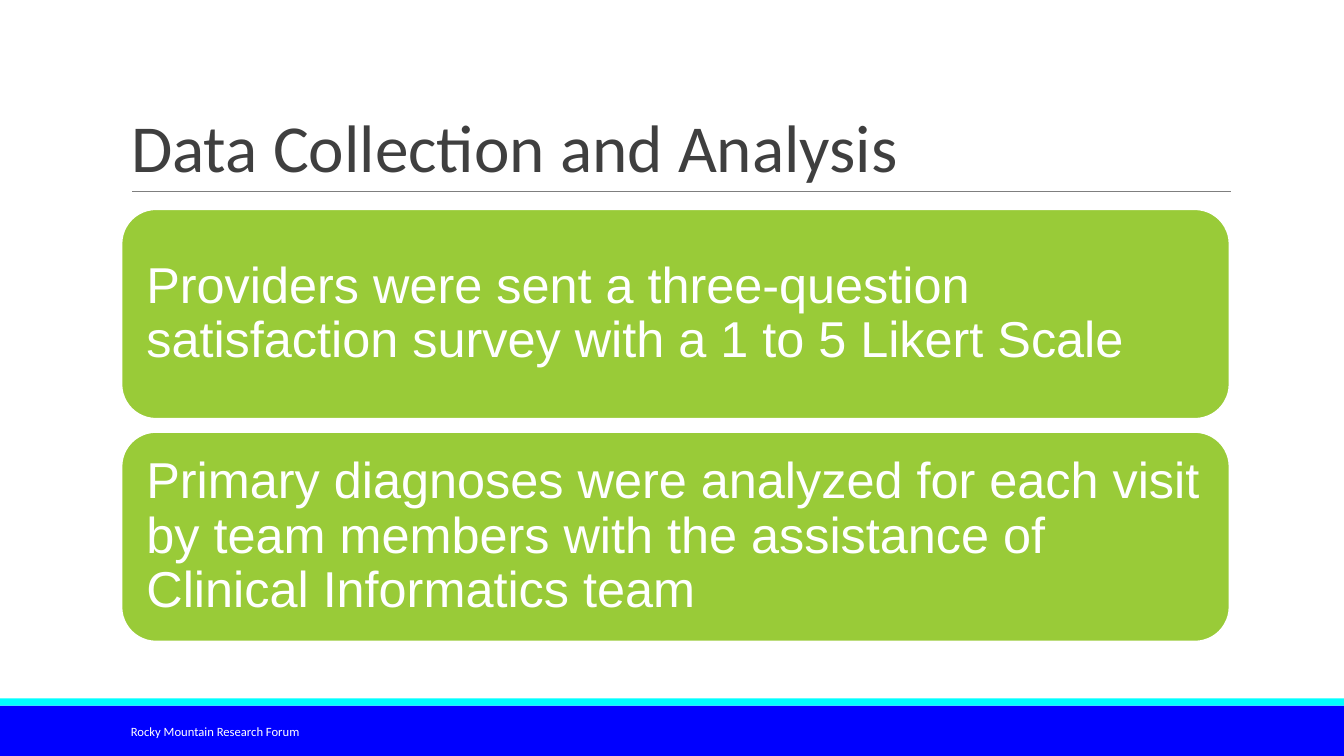
from pptx import Presentation
from pptx.dml.color import RGBColor
from pptx.enum.shapes import MSO_CONNECTOR as Link, MSO_SHAPE as Kind
from pptx.enum.text import MSO_ANCHOR as Anchor, MSO_AUTO_SIZE as Fit, PP_ALIGN as Align
from pptx.util import Emu, Pt
from lxml.etree import SubElement
from pptx.oxml.ns import qn


def tint(code):
    return RGBColor.from_string(code)


class Deck:
    """Holds the style and the current slide, and draws each kind of element."""

    SCALE = 9144
    WHITE, INK, RULE = "FFFFFF", "3F3F3F", "7F7F7F"
    GREEN, BLUE, CYAN = "99CB38", "0000FF", "00FFFF"
    HEAD, BODY = "Calibri", "Arial"

    def __init__(self, width, height):
        self.show = Presentation()
        self.show.slide_width, self.show.slide_height = self.size(width, height)
        self.slide = self.show.slides.add_slide(self.show.slide_layouts[5])
        self.slide.background.fill.solid()
        self.slide.background.fill.fore_color.rgb = tint(self.WHITE)

    def size(self, *spans):
        return [Emu(span * self.SCALE) for span in spans]

    def label(self, shape, words, points, font, color, anchor, pads, lead=1.0):
        frame = shape.text_frame
        frame.auto_size = Fit.NONE
        frame.word_wrap = True
        frame.vertical_anchor = anchor
        side, edge = self.size(*pads)
        frame.margin_left = frame.margin_right = side
        frame.margin_top = frame.margin_bottom = edge
        para = frame.paragraphs[0]
        para.alignment = Align.LEFT
        para.line_spacing = lead
        run = para.add_run()
        run.text = words
        run.font.name, run.font.size = font, Pt(points)
        run.font.color.rgb = tint(color)

    def block(self, kind, box, fill):
        shape = self.slide.shapes.add_shape(kind, *self.size(*box))
        shape.shadow.inherit = False
        shape.fill.solid()
        shape.fill.fore_color.rgb = tint(fill)
        shape.line.fill.background()
        return shape

    def band(self, box, fill):
        self.block(Kind.RECTANGLE, box, fill)

    def card(self, box, words):
        shape = self.block(Kind.ROUNDED_RECTANGLE, box, self.GREEN)
        shape.line.color.rgb = tint(self.WHITE)
        shape.line.width = Pt(2)
        self.label(shape, words, 36, self.BODY, self.WHITE, Anchor.MIDDLE, (15, 15), 0.9)

    def rule(self, left, right, top):
        line = self.slide.shapes.add_connector(
            Link.STRAIGHT, *self.size(left, top, right, top))
        line.line.color.rgb = tint(self.RULE)
        line.line.width = Pt(0.75)
        SubElement(line._element.spPr, qn("a:effectLst"))

    def title(self, box, words):
        shape = self.slide.shapes.title
        shape.left, shape.top, shape.width, shape.height = self.size(*box)
        self.label(shape, words, 48, self.HEAD, self.INK, Anchor.BOTTOM, (10, 5), 0.85)

    def note(self, box, words):
        shape = self.slide.shapes.add_textbox(*self.size(*box))
        self.label(shape, words, 9, self.HEAD, self.WHITE, Anchor.MIDDLE, (10, 5))


def main():
    wide, high, left, span = 1333, 750, 120, 1100
    deck = Deck(wide, high)
    deck.band((0, 700, wide, 50), deck.BLUE)
    deck.band((0, 693, wide, 7), deck.CYAN)
    deck.rule(131, 1221, 190)
    deck.title((left, 31, span, 159), "Data Collection and Analysis")
    points = (
        "Providers were sent a three-question satisfaction survey with a 1 to 5 Likert Scale",
        "Primary diagnoses were analyzed for each visit by team members "
        "with the assistance of Clinical Informatics team",
    )
    top, tall, gap = 207, 209, 12
    for row, words in enumerate(points):
        deck.card((left, top + row * (tall + gap), span, tall), words)
    deck.note((left, 706, 270, 40), "Rocky Mountain Research Forum")
    deck.show.save("out.pptx")


if __name__ == "__main__":
    main()
